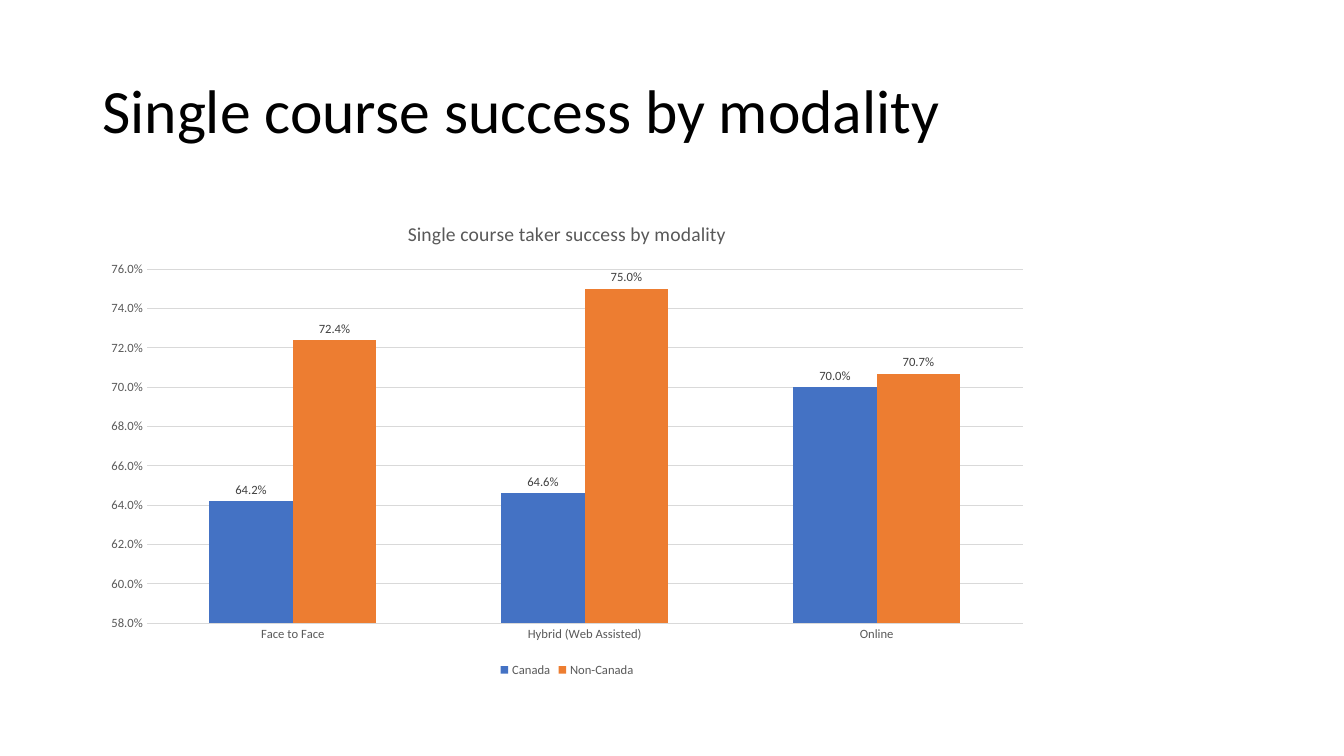
from typing import NamedTuple

from pptx import Presentation
from pptx import util as u
from pptx.chart.data import CategoryChartData
from pptx.dml.color import RGBColor
from pptx.enum import chart as ch
from pptx.enum import text

FONT = "Calibri"
PERCENT = "0.0%"
BLACK = RGBColor(0x00, 0x00, 0x00)
LABEL_GRAY = RGBColor(0x40, 0x40, 0x40)
TEXT_GRAY = RGBColor(0x59, 0x59, 0x59)
GRID_GRAY = RGBColor(0xD9, 0xD9, 0xD9)
BLUE = RGBColor(0x44, 0x72, 0xC4)
ORANGE = RGBColor(0xED, 0x7D, 0x31)


class Group(NamedTuple):
    name: str
    rates: tuple[float, ...]
    color: RGBColor


MODALITIES = ("Face to Face", "Hybrid (Web Assisted)", "Online")
GROUPS = (
    Group("Canada", (0.642, 0.646, 0.7), BLUE),
    Group("Non-Canada", (0.724, 0.75, 0.707), ORANGE),
)


def set_font(font, size: float, color: RGBColor) -> None:
    font.name = FONT
    font.size = u.Pt(size)
    font.bold = False
    font.color.rgb = color


def set_line(line, color: RGBColor) -> None:
    line.color.rgb = color
    line.width = u.Pt(0.75)


def add_heading(slide) -> None:
    heading = slide.shapes.add_textbox(u.Cm(2.33), u.Cm(1.01), u.Cm(29.21), u.Cm(3.68))
    frame = heading.text_frame
    frame.word_wrap = True
    frame.vertical_anchor = text.MSO_ANCHOR.MIDDLE
    paragraph = frame.paragraphs[0]
    paragraph.line_spacing = 0.9
    run = paragraph.add_run()
    run.text = "Single course success by modality"
    set_font(run.font, 44, BLACK)


def style_axes(chart) -> None:
    for axis in (chart.category_axis, chart.value_axis):
        axis.major_tick_mark = ch.XL_TICK_MARK.NONE
        axis.minor_tick_mark = ch.XL_TICK_MARK.NONE
        set_font(axis.tick_labels.font, 9, TEXT_GRAY)
    set_line(chart.category_axis.format.line, GRID_GRAY)

    rate_axis = chart.value_axis
    rate_axis.minimum_scale = 0.58
    rate_axis.maximum_scale = 0.76
    rate_axis.major_unit = 0.02
    rate_axis.format.line.fill.background()
    set_line(rate_axis.major_gridlines.format.line, GRID_GRAY)
    rate_axis.tick_labels.number_format = PERCENT
    rate_axis.tick_labels.number_format_is_linked = False


def style_bars(series, color: RGBColor) -> None:
    series.format.fill.solid()
    series.format.fill.fore_color.rgb = color
    series.invert_if_negative = False
    labels = series.data_labels
    labels.show_value = True
    labels.position = ch.XL_LABEL_POSITION.OUTSIDE_END
    labels.number_format = PERCENT
    labels.number_format_is_linked = False
    set_font(labels.font, 9, LABEL_GRAY)


def add_success_chart(slide) -> None:
    success = CategoryChartData(number_format=PERCENT)
    success.categories = MODALITIES
    for group in GROUPS:
        success.add_series(group.name, group.rates)
    chart = slide.shapes.add_chart(
        ch.XL_CHART_TYPE.COLUMN_CLUSTERED,
        u.Cm(2.33), u.Cm(5.08), u.Cm(23.92), u.Cm(12.09), success,
    ).chart
    set_font(chart.font, 10, BLACK)

    chart.has_title = True
    caption = chart.chart_title.text_frame.paragraphs[0].add_run()
    caption.text = "Single course taker success by modality"
    set_font(caption.font, 14, TEXT_GRAY)
    chart.chart_title.include_in_layout = False

    chart.has_legend = True
    chart.legend.position = ch.XL_LEGEND_POSITION.BOTTOM
    chart.legend.include_in_layout = False
    set_font(chart.legend.font, 9, TEXT_GRAY)

    style_axes(chart)
    plot = chart.plots[0]
    plot.gap_width = 150
    plot.overlap = 0
    plot.vary_by_categories = False
    for series, group in zip(plot.series, GROUPS):
        style_bars(series, group.color)


def main() -> None:
    deck = Presentation()
    deck.slide_width, deck.slide_height = u.Cm(33.87), u.Cm(19.05)
    slide = deck.slides.add_slide(deck.slide_layouts[6])
    add_success_chart(slide)
    add_heading(slide)
    deck.save("out.pptx")


if __name__ == "__main__":
    main()
